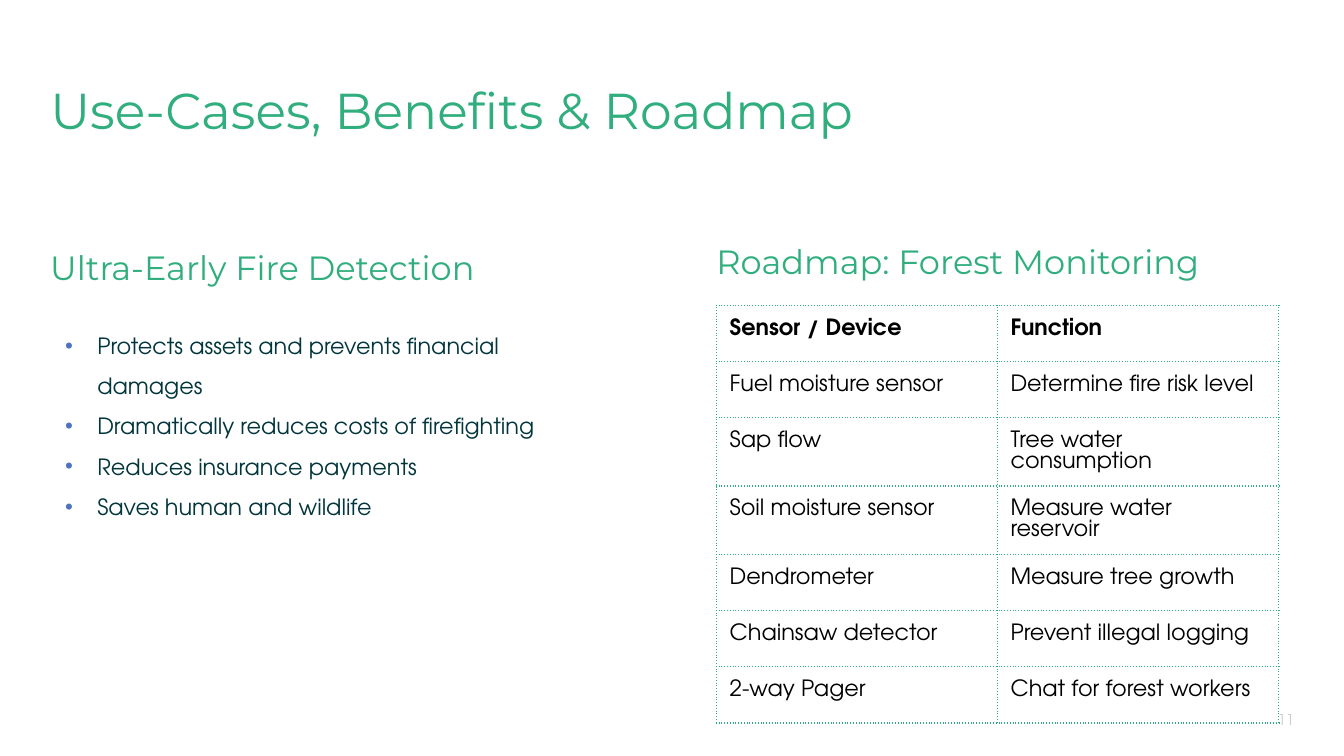
from dataclasses import dataclass

from lxml import etree
from pptx import Presentation
from pptx.dml.color import RGBColor
from pptx.enum import text as t
from pptx.oxml.ns import qn
from pptx.util import Cm, Pt


@dataclass(frozen=True)
class Theme:
    green: str = "30AE7D"
    dark: str = "02353C"
    black: str = "000000"
    bullet: str = "4D73BD"
    pale: str = "CCCCCC"
    heading_font: str = "Montserrat"
    body_font: str = "TeX Gyre Adventor"
    title_size: float = 27
    subtitle_size: float = 18
    body_size: float = 12
    number_size: float = 8


THEME = Theme()
INSET = Cm(0.25)

BENEFITS = [
    "Protects assets and prevents financial damages",
    "Dramatically reduces costs of firefighting",
    "Reduces insurance payments",
    "Saves human and wildlife",
]
ROADMAP = [
    ("Sensor / Device", "Function"),
    ("Fuel moisture sensor", "Determine fire risk level"),
    ("Sap flow", "Tree water consumption"),
    ("Soil moisture sensor", "Measure water reservoir"),
    ("Dendrometer", "Measure tree growth"),
    ("Chainsaw detector", "Prevent illegal logging"),
    ("2-way Pager", "Chat for forest workers"),
]


def add_run(paragraph, words, font, size, color, bold=False):
    run = paragraph.add_run()
    run.text = words
    run.font.name = font
    run.font.size = Pt(size)
    run.font.bold = bold
    run.font.color.rgb = RGBColor.from_string(color)


def prepare_frame(frame, left=0, right=INSET):
    frame.word_wrap = True
    frame.auto_size = t.MSO_AUTO_SIZE.NONE
    frame.vertical_anchor = t.MSO_ANCHOR.TOP
    frame.margin_left, frame.margin_right = left, right
    frame.margin_top = frame.margin_bottom = INSET
    return frame


def add_frame(slide, box, **margins):
    return prepare_frame(slide.shapes.add_textbox(*box).text_frame, **margins)


def place_title(slide, box, words):
    title = slide.shapes.title
    title.left, title.top, title.width, title.height = box
    paragraph = prepare_frame(title.text_frame).paragraphs[0]
    paragraph.alignment = t.PP_ALIGN.LEFT
    add_run(paragraph, words, THEME.heading_font, THEME.title_size, THEME.green)


def place_subtitle(slide, box, words, spacing=1.0):
    paragraph = add_frame(slide, box).paragraphs[0]
    paragraph.line_spacing = spacing
    add_run(paragraph, words, THEME.heading_font, THEME.subtitle_size, THEME.green)


def add_bullet(paragraph):
    props = paragraph._p.get_or_add_pPr()
    props.set("marL", str(Cm(0.89)))
    props.set("indent", str(Cm(-0.61)))
    color = etree.SubElement(props, qn("a:buClr"))
    etree.SubElement(color, qn("a:srgbClr"), val=THEME.bullet)
    etree.SubElement(props, qn("a:buFont"), typeface="Arial")
    etree.SubElement(props, qn("a:buChar"), char="•")


def place_benefits(slide, box, benefits):
    frame = add_frame(slide, box)
    for index, benefit in enumerate(benefits):
        paragraph = frame.add_paragraph() if index else frame.paragraphs[0]
        add_bullet(paragraph)
        paragraph.line_spacing = 1.5
        add_run(paragraph, benefit, THEME.body_font, THEME.body_size, THEME.dark)


def add_borders(cell):
    props = cell._tc.get_or_add_tcPr()
    for index, side in enumerate(("lnL", "lnR", "lnT", "lnB")):
        line = etree.Element(qn(f"a:{side}"), w=str(Pt(0.75)))
        fill = etree.SubElement(line, qn("a:solidFill"))
        etree.SubElement(fill, qn("a:srgbClr"), val=THEME.green)
        etree.SubElement(line, qn("a:prstDash"), val="dot")
        props.insert(index, line)


def place_roadmap(slide, box, rows):
    table = slide.shapes.add_table(len(rows), len(rows[0]), *box).table
    table.first_row = table.horz_banding = False
    for row_index, row in enumerate(rows):
        for column_index, words in enumerate(row):
            cell = table.cell(row_index, column_index)
            cell.fill.background()
            cell.margin_left = cell.margin_right = INSET
            cell.margin_top = cell.margin_bottom = INSET
            add_borders(cell)
            add_run(cell.text_frame.paragraphs[0], words, THEME.body_font,
                    THEME.body_size, THEME.black, bold=row_index == 0)


def place_number(slide, box, number):
    paragraph = add_frame(slide, box, left=INSET, right=0).paragraphs[0]
    paragraph.alignment = t.PP_ALIGN.RIGHT
    add_run(paragraph, number, THEME.body_font, THEME.number_size, THEME.pale)


def main():
    deck = Presentation()
    deck.slide_width, deck.slide_height = Cm(25.4), Cm(14.29)
    slide = deck.slides.add_slide(deck.slide_layouts[5])

    left, right = Cm(0.95), Cm(13.54)
    subtitle_top, content_top = Cm(4.3), Cm(5.77)

    # Left column: benefits
    place_benefits(slide, (left, content_top, Cm(10.34), Cm(7.75)), BENEFITS)
    place_title(slide, (left, Cm(1.24), Cm(21.46), Cm(1.27)),
                "Use-Cases, Benefits & Roadmap")
    place_number(slide, (Cm(22.96), Cm(13.18), Cm(1.5), Cm(0.76)), "11")
    place_subtitle(slide, (left, subtitle_top, Cm(11.18), Cm(0.97)),
                   "Ultra-Early Fire Detection", spacing=1.15)

    # Right column: roadmap
    place_subtitle(slide, (right, subtitle_top, Cm(11.96), Cm(0.97)),
                   "Roadmap: Forest Monitoring")
    place_roadmap(slide, (right, content_top, Cm(10.62), Cm(7.45)), ROADMAP)

    deck.save("out.pptx")


if __name__ == "__main__":
    main()
